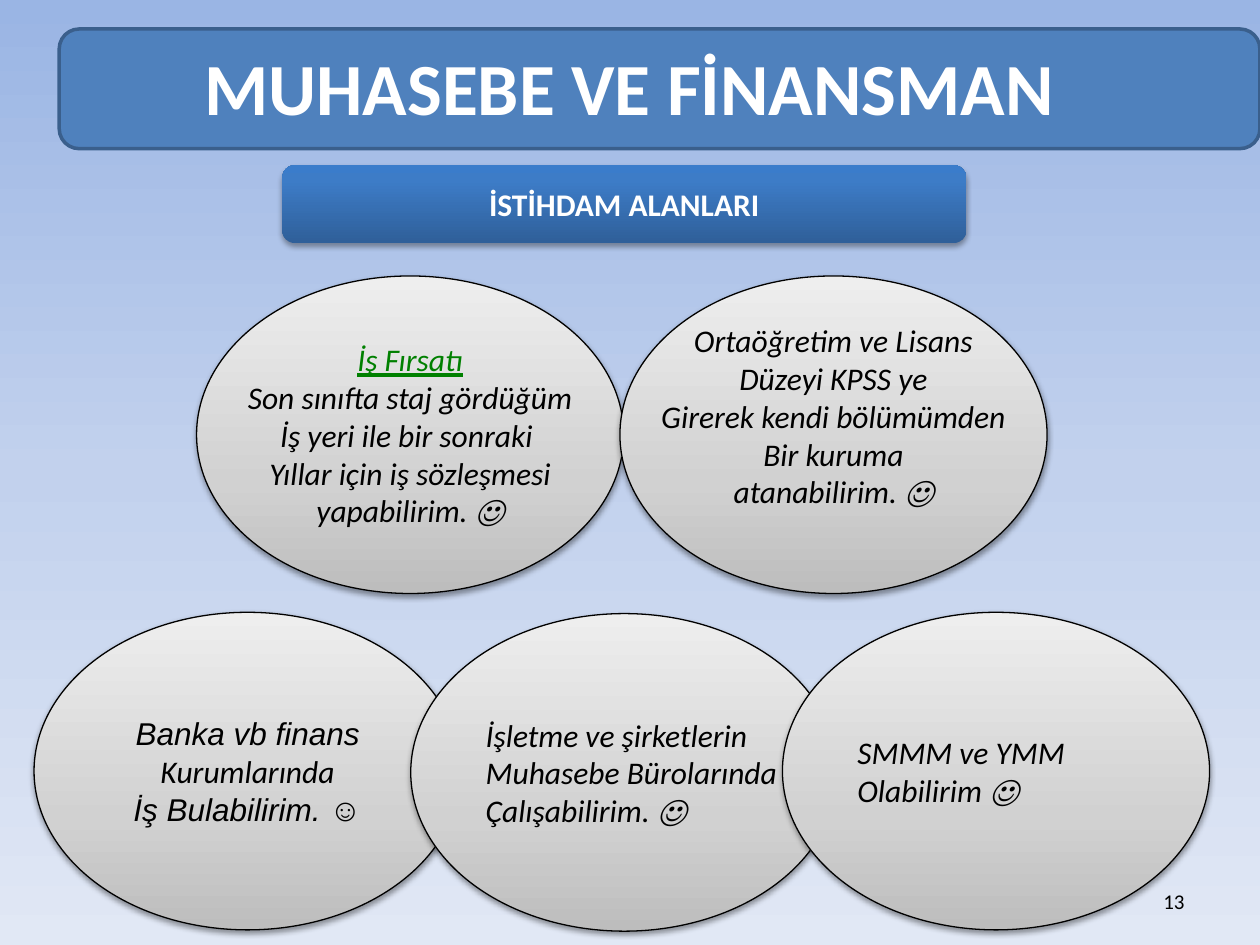
from pptx import Presentation
from pptx.dml.color import RGBColor
from pptx.enum.shapes import MSO_SHAPE
from pptx.enum.text import MSO_ANCHOR, PP_ALIGN
from pptx.oxml import parse_xml
from pptx.oxml.ns import nsdecls, qn
from pptx.util import Inches, Pt

THEME = {
    "banner": "4F81BD", "banner_line": "3A5F8C",
    "white": "FFFFFF", "black": "000000", "green": "008000",
    "sky": [(0, "9AB5E4"), (50, "C2D1ED"), (100, "E1E8F5")],
    "blue": [(0, "2F5F99"), (80, "3D7CC7"), (100, "3A7CCB")],
    "grey": [(0, "BDBDBD"), (35, "D1D1D1"), (100, "EEEEEE")],
    "title_size": 42, "text_size": 18, "number_size": 12,
    "font": "Calibri", "alt_font": "Arial",
}
LEFT, CENTER, RIGHT = PP_ALIGN.LEFT, PP_ALIGN.CENTER, PP_ALIGN.RIGHT


def set_gradient(fill, element, stops, angle):
    fill.gradient()
    fill.gradient_angle = angle
    stop_list = element.find(".//" + qn("a:gsLst"))
    for old in list(stop_list):
        stop_list.remove(old)
    for pos, color in stops:
        stop_list.append(parse_xml(
            f'<a:gs {nsdecls("a")} pos="{pos * 1000}"><a:srgbClr val="{color}"/></a:gs>'))


def write(sp, lines, align, wrap=False, **base):
    """Fill a shape with (text, font overrides) lines, one paragraph each."""
    tf = sp.text_frame
    tf.word_wrap = wrap
    tf.vertical_anchor = MSO_ANCHOR.MIDDLE
    for i, (text, extra) in enumerate(lines):
        p = tf.paragraphs[0] if i == 0 else tf.add_paragraph()
        p.alignment = align
        r = p.add_run()
        r.text = text
        values = {"name": THEME["font"], "size": THEME["text_size"],
                  "color": THEME["black"], **base, **extra}
        r.font.color.rgb = RGBColor.from_string(values.pop("color"))
        values["size"] = Pt(values["size"])
        for key, value in values.items():
            setattr(r.font, key, value)


prs = Presentation()
prs.slide_width, prs.slide_height = Inches(10), Inches(7.5)
s = prs.slides.add_slide(prs.slide_layouts[5])
set_gradient(s.background.fill, s.element, THEME["sky"], 270)

# Slide number
number = s.shapes.add_textbox(Inches(7.17), Inches(6.95), Inches(2.33), Inches(0.4))
write(number, [("13", {})], RIGHT, wrap=True, size=THEME["number_size"])

# Banner with the title over it
banner = s.shapes.add_shape(MSO_SHAPE.ROUNDED_RECTANGLE,
                            Inches(0.47), Inches(0.23), Inches(9.53), Inches(0.95))
banner.shadow.inherit = False
banner.fill.solid()
banner.fill.fore_color.rgb = RGBColor.from_string(THEME["banner"])
banner.line.color.rgb = RGBColor.from_string(THEME["banner_line"])
banner.line.width = Pt(2)

title = s.shapes.title
title.left, title.top = Inches(0.27), Inches(0.06)
title.width, title.height = Inches(9.45), Inches(1.25)
write(title, [("MUHASEBE VE FİNANSMAN", {})], CENTER, wrap=True,
      size=THEME["title_size"], color=THEME["white"], bold=True)
banner.element.addnext(title.element)

# Subheading and the five job ellipses
link = {"color": THEME["green"], "underline": True}
arial = {"name": THEME["alt_font"]}
heading_font = {"color": THEME["white"], "bold": True}
job_font = {"italic": True}
ELLIPSE = (MSO_SHAPE.OVAL, 3.39, 2.52, THEME["grey"], 38, 1.6, job_font)
HEADING = (MSO_SHAPE.ROUNDED_RECTANGLE, 5.43, 0.62, THEME["blue"], 35, 1.8, heading_font)

# style, left, top, bottom inset, alignment, lines
parts = [
    (HEADING, 2.24, 1.31, 0.05, CENTER, [("İSTİHDAM ALANLARI", {})]),
    (ELLIPSE, 1.56, 2.19, 0.05, CENTER, [
        ("İş Fırsatı", link), ("Son sınıfta staj gördüğüm", {}),
        ("İş yeri ile bir sonraki ", {}), ("Yıllar için iş sözleşmesi", {}),
        ("yapabilirim. ☺", {})]),
    (ELLIPSE, 4.92, 2.19, 0.35, CENTER, [
        ("Ortaöğretim ve Lisans", {}), ("Düzeyi KPSS ye", {}),
        ("Girerek kendi bölümümden", {}), ("Bir kuruma", {}),
        ("atanabilirim. ☺", {})]),
    (ELLIPSE, 0.27, 4.86, 0.05, CENTER, [
        ("Banka vb finans", arial), ("Kurumlarında", {}),
        ("İş Bulabilirim. ☺", arial)]),
    (ELLIPSE, 3.26, 4.87, 0.05, LEFT, [
        ("İşletme ve şirketlerin", {}), ("Muhasebe Bürolarında", {}),
        ("Çalışabilirim. ☺", {})]),
    (ELLIPSE, 6.21, 4.86, 0.05, LEFT, [("SMMM ve YMM", {}), ("Olabilirim ☺", {})]),
]
for style, left, top, inset, align, lines in parts:
    kind, width, height, stops, alpha, distance, font = style
    sp = s.shapes.add_shape(kind, Inches(left), Inches(top), Inches(width), Inches(height))
    set_gradient(sp.fill, sp.element, stops, 90)
    if kind == MSO_SHAPE.OVAL:
        sp.line.color.rgb = RGBColor.from_string(THEME["black"])
        sp.line.width = Pt(0.75)
    else:
        sp.line.fill.background()
    # Soft shadow falling straight down
    sp.shadow.inherit = False
    sp.element.spPr.find(qn("a:effectLst")).append(parse_xml(
        f'<a:outerShdw {nsdecls("a")} blurRad="{Pt(3.1)}" dist="{Pt(distance)}" '
        f'dir="5400000" rotWithShape="0"><a:srgbClr val="{THEME["black"]}">'
        f'<a:alpha val="{alpha * 1000}"/></a:srgbClr></a:outerShdw>'))
    sp.text_frame.margin_bottom = Inches(inset)
    write(sp, lines, align, **font)

prs.save("out.pptx")
